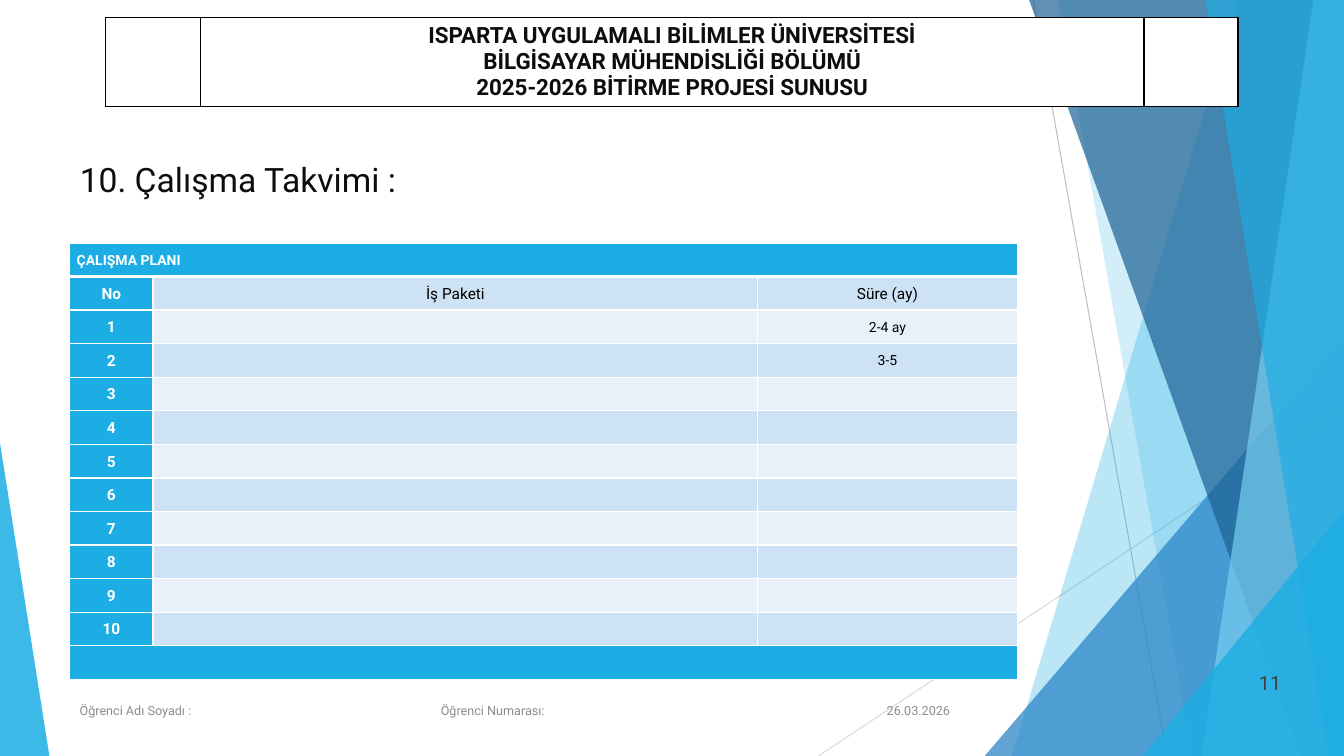
from dataclasses import dataclass

from pptx import Presentation
from pptx.dml.color import RGBColor
from pptx.enum.shapes import MSO_CONNECTOR as CONN, MSO_SHAPE as SHAPE
from pptx.enum.text import MSO_ANCHOR as ANCHOR, MSO_AUTO_SIZE as AUTO, PP_ALIGN as ALIGN
from pptx.oxml.ns import qn
from pptx.util import Pt
from lxml.etree import SubElement


@dataclass(frozen=True)
class Theme:
    font: str = "Roboto"
    white: str = "FFFFFF"
    black: str = "000000"
    ink: str = "0D0D0D"
    number: str = "404040"
    muted: str = "8C8C8C"
    accent: str = "1CADE4"
    blue: str = "2683C6"
    navy: str = "1D6294"
    sky: str = "77CEEF"
    band_dark: str = "CDE3F5"
    band_light: str = "E8F1FA"
    line_dark: str = "BFBFBF"
    line_light: str = "D9D9D9"
    title: int = 24
    header: int = 16
    page: int = 14
    label: int = 11
    body: int = 10
    footer: int = 9


T = Theme()
W, H = 960, 540


def rgb(color):
    return RGBColor.from_string(color)


def write(tf, text, size, color, bold=False, align=ALIGN.LEFT, spacing=None, after=None, tab=None):
    for i, line in enumerate(text.split("\n")):
        p = tf.add_paragraph() if i else tf.paragraphs[0]
        if tab:
            tabs = SubElement(p._p.get_or_add_pPr(), qn("a:tabLst"))
            SubElement(tabs, qn("a:tab"), pos=str(Pt(tab)), algn="l")
        p.alignment = align
        if spacing:
            p.line_spacing = spacing
        if after:
            p.space_after = Pt(after)
        r = p.add_run()
        r.text = line
        r.font.name, r.font.size, r.font.bold = T.font, Pt(size), bold
        r.font.color.rgb = rgb(color)


def add_text(slide, box, text, anchor=ANCHOR.MIDDLE, **fmt):
    tf = slide.shapes.add_textbox(*map(Pt, box)).text_frame
    tf.word_wrap = True
    tf.vertical_anchor = anchor
    write(tf, text, **fmt)


def tint(sp, color, opacity):
    sp.shadow.inherit = False
    sp.line.fill.background()
    sp.fill.solid()
    sp.fill.fore_color.rgb = rgb(color)
    clr = sp._element.spPr.find(".//" + qn("a:srgbClr"))
    SubElement(clr, qn("a:alpha"), val=str(opacity * 1000))


def add_line(slide, start, end, color):
    ln = slide.shapes.add_connector(CONN.STRAIGHT, *map(Pt, start + end))
    ln.line.color.rgb = rgb(color)
    ln.line.width = Pt(0.75)
    SubElement(ln._element.spPr, qn("a:effectLst"))


def add_panel(slide, box, top_x, bottom_x, color, opacity):
    x, y, w, h = box
    corners = [(x + w, y), (x + w, y + h), (x + bottom_x, y + h)]
    fb = slide.shapes.build_freeform(Pt(x + top_x), Pt(y))
    fb.add_line_segments([(Pt(px), Pt(py)) for px, py in corners], close=True)
    tint(fb.convert_to_shape(), color, opacity)


def add_triangle(slide, box, apex, color, opacity):
    sp = slide.shapes.add_shape(SHAPE.ISOSCELES_TRIANGLE, *map(Pt, box))
    sp.adjustments[0] = apex
    tint(sp, color, opacity)


def add_facets(slide, box):
    x, y, w, h = box
    right, bottom = x + w, y + h
    add_line(slide, (x + 34.6, y), (x + 130.4, bottom), T.line_dark)
    add_line(slide, (right, y + 291), (x - 118.8, bottom), T.line_light)
    add_panel(slide, box, 180.8, 19.5, T.accent, 30)
    add_panel(slide, box, 52.6, 148.4, T.accent, 20)
    add_triangle(slide, (x, bottom - 300, w, 300), 1, T.blue, 72)
    add_panel(slide, box, 31.7, 226.1, T.navy, 70)
    add_panel(slide, box, 234.8, 154.8, T.sky, 70)
    add_panel(slide, box, 157.7, 245.6, T.accent, 65)
    add_triangle(slide, (right - 143.5, bottom - 175.5, 143.5, 175.5), 1, T.accent, 80)
    add_triangle(slide, (0, bottom - 223.5, 35.3, 223.5), 0, T.accent, 85)


def style_cell(cell, fill, border, bottom=1):
    tcPr = cell._tc.get_or_add_tcPr()
    for side, width in (("L", 1), ("R", 1), ("T", 1), ("B", bottom)):
        ln = SubElement(tcPr, qn("a:ln" + side), w=str(Pt(width)))
        SubElement(SubElement(ln, qn("a:solidFill")), qn("a:srgbClr"), val=border)
    cell.fill.solid()
    cell.fill.fore_color.rgb = rgb(fill)


def add_grid(slide, box, rows, widths):
    table = slide.shapes.add_table(rows, len(widths), *map(Pt, box)).table
    table.first_row = table.horz_banding = False
    for col, width in zip(table.columns, widths):
        col.width = Pt(width)
    for row in table.rows:
        row.height = Pt(box[3] / rows)
    return table


def add_header(slide, box):
    table = add_grid(slide, box, 1, (68, 674, 67.2))
    for cell in table.iter_cells():
        style_cell(cell, T.white, T.black)
    write(table.cell(0, 1).text_frame,
          "ISPARTA UYGULAMALI BİLİMLER ÜNİVERSİTESİ\n"
          "BİLGİSAYAR MÜHENDİSLİĞİ BÖLÜMÜ\n"
          "2025-2026 BİTİRME PROJESİ SUNUSU",
          size=T.header, color=T.ink, bold=True, align=ALIGN.CENTER)


def add_title(slide, box, text):
    sp = slide.shapes.title
    sp.left, sp.top, sp.width, sp.height = map(Pt, box)
    tf = sp.text_frame
    tf.auto_size = AUTO.NONE
    tf.vertical_anchor = ANCHOR.MIDDLE
    write(tf, text, size=T.title, color=T.ink)


def add_plan(slide, box):
    durations = {1: "2-4 ay", 2: "3-5"}
    rows = [("ÇALIŞMA PLANI", "", ""), ("No", "İş Paketi", "Süre (ay)")]
    rows += [(str(n), "", durations.get(n, "")) for n in range(1, 11)]
    rows.append(("", "", ""))
    last = len(rows) - 1
    table = add_grid(slide, box, len(rows), (59.5, 432, 185.3))
    for i, row in enumerate(rows):
        for j, text in enumerate(row):
            cell = table.cell(i, j)
            solid = j == 0 or i in (0, last)
            band = T.band_dark if i % 2 else T.band_light
            style_cell(cell, T.accent if solid else band, T.white, bottom=1 if i else 3)
            cell.margin_left = cell.margin_right = Pt(5)
            cell.margin_top = cell.margin_bottom = 0
            cell.vertical_anchor = ANCHOR.MIDDLE
            if text:
                small = i == 0 or (i > 1 and j == 2)
                write(cell.text_frame, text, size=T.body if small else T.label,
                      color=T.white if solid else T.black, bold=solid,
                      align=ALIGN.CENTER if i else ALIGN.JUSTIFY, spacing=1.07, after=8)
    for i in (0, last):
        table.cell(i, 0).merge(table.cell(i, 2))


def add_footer(slide, box):
    x, y, w, h = box
    add_text(slide, (x + 543.6, y, 92.2, h), "26.03.2026",
             size=T.footer, color=T.muted, align=ALIGN.RIGHT)
    add_text(slide, (x, y, 496, h), "Öğrenci Adı Soyadı :\tÖğrenci Numarası:",
             size=T.footer, color=T.muted, tab=258)
    add_text(slide, (x + w - 57.6, y - 17.3, 57.6, h), "11", anchor=ANCHOR.TOP,
             size=T.page, color=T.number, align=ALIGN.CENTER)


def main():
    prs = Presentation()
    prs.slide_width, prs.slide_height = Pt(W), Pt(H)
    slide = prs.slides.add_slide(prs.slide_layouts[5])
    add_facets(slide, (703.4, 0, W - 703.4, H))
    add_header(slide, (75.2, 12.4, 809.2, 63.6))
    add_plan(slide, (49.8, 173.5, 676.8, 312))
    add_footer(slide, (49.8, 493.2, 886.2, 28.8))
    add_title(slide, (49.8, 92.2, 676.8, 71.3), "10. Çalışma Takvimi :")
    prs.save("out.pptx")


if __name__ == "__main__":
    main()
